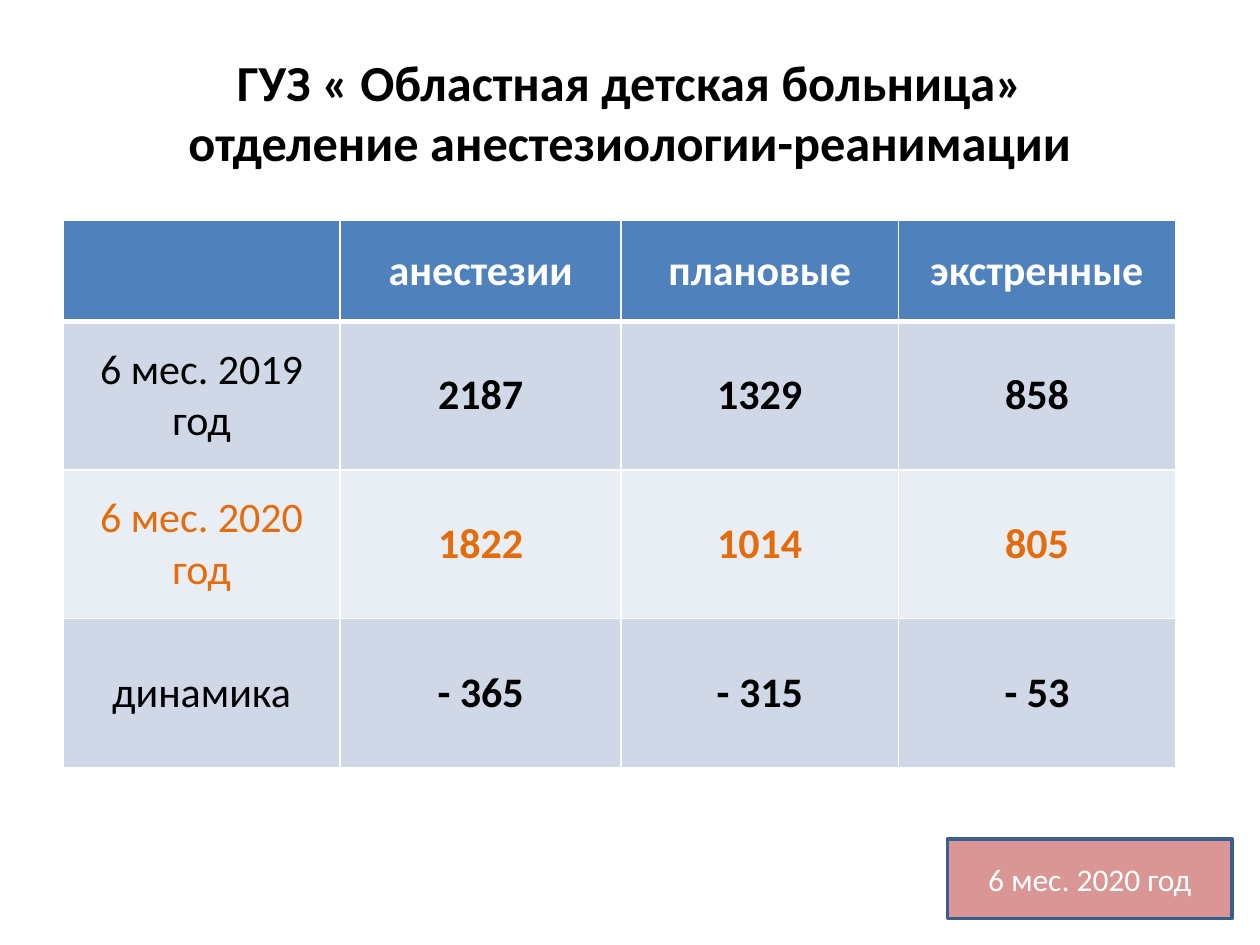
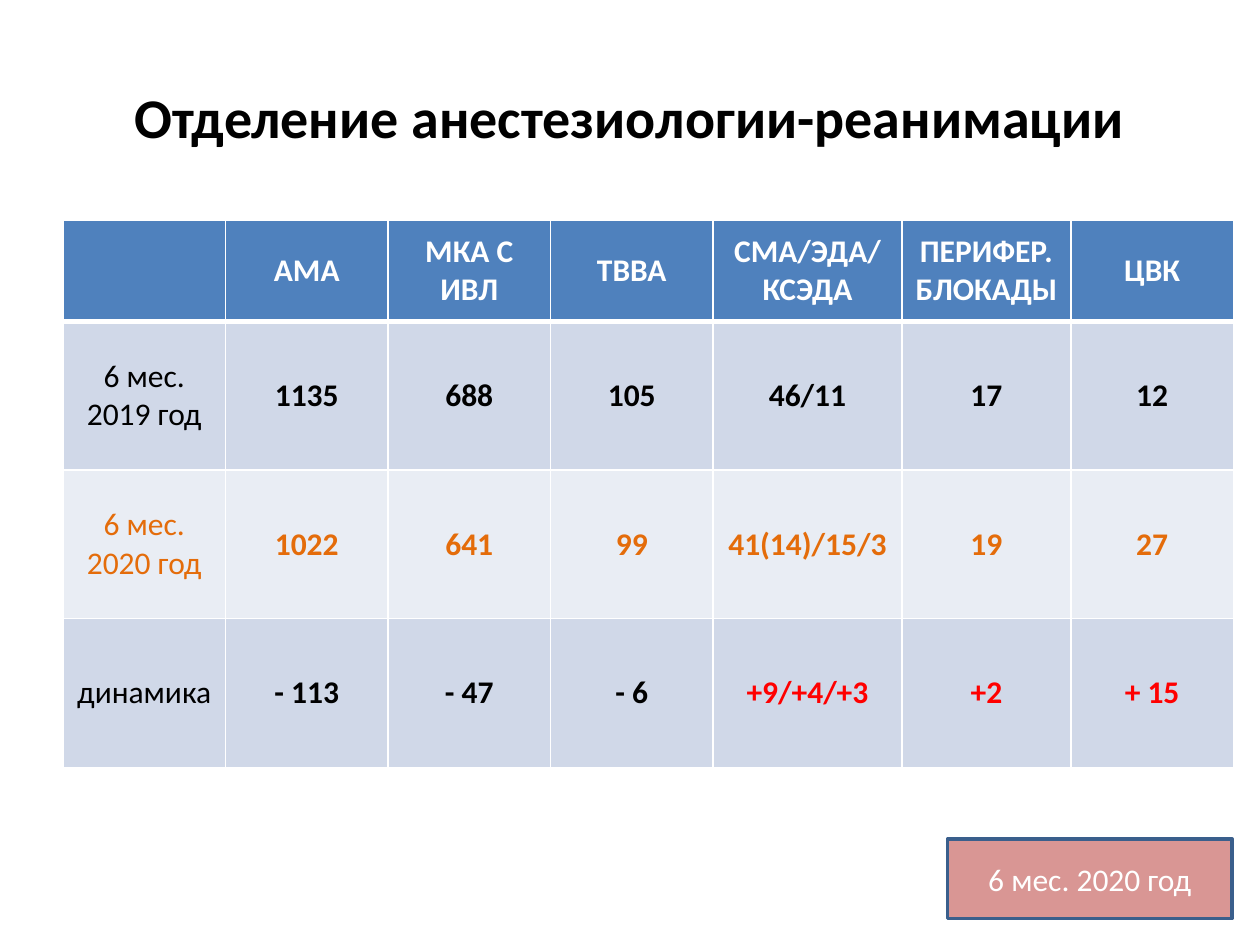
from dataclasses import dataclass

from lxml.etree import SubElement
from pptx import Presentation
from pptx.dml.color import RGBColor
from pptx.enum.shapes import MSO_SHAPE as Shape
from pptx.enum.text import MSO_ANCHOR as Anchor, PP_ALIGN as Align
from pptx.oxml.ns import qn
from pptx.slide import Slide
from pptx.table import _Cell as Cell
from pptx.text.text import TextFrame
from pptx.util import Inches, Pt

FONT = "Calibri"
BLACK = RGBColor(0x00, 0x00, 0x00)
WHITE = RGBColor(0xFF, 0xFF, 0xFF)
RED = RGBColor(0xFF, 0x00, 0x00)
ORANGE = RGBColor(0xE4, 0x6C, 0x0A)
HEADER_BLUE = RGBColor(0x4F, 0x81, 0xBD)
BAND_DARK = RGBColor(0xD0, 0xD8, 0xE8)
BAND_LIGHT = RGBColor(0xE9, 0xED, 0xF4)
BADGE_PINK = RGBColor(0xD9, 0x96, 0x94)
BADGE_LINE = RGBColor(0x3A, 0x5F, 0x8C)

LEFT = 0.5
TABLE_TOP = 1.75
ROW_HEIGHTS = (0.8, 1.18, 1.18, 1.18)
ROW_FILLS = (HEADER_BLUE, BAND_DARK, BAND_LIGHT, BAND_DARK)
ROW_COLORS = (WHITE, BLACK, ORANGE, BLACK)
ROW_LABELS = ("", "6 мес. 2019 год", "6 мес. 2020 год", "динамика")
REPORT_PERIOD = ROW_LABELS[2]


@dataclass(frozen=True)
class TextStyle:
    size: float
    color: RGBColor
    bold: bool = False


@dataclass(frozen=True)
class Report:
    title_lines: tuple[str, ...]
    title_size: float
    title_height: float
    table_size: float
    column_widths: tuple[float, ...]
    values: tuple[tuple[str, ...], ...]
    growth_color: RGBColor = RED


REPORTS = (
    Report(
        ("ГУЗ « Областная детская больница»", "отделение анестезиологии-реанимации"),
        28.8, 1.17, 24, (2.2, 2.23, 2.2, 2.2),
        (
            ("анестезии", "плановые", "экстренные"),
            ("2187", "1329", "858"),
            ("1822", "1014", "805"),
            ("- 365", "- 315", "- 53"),
        ),
    ),
    Report(
        ("Отделение анестезиологии-реанимации",),
        32, 1.25, 18, (1.29, 1.29, 1.29, 1.29, 1.5, 1.34, 1.29),
        (
            ("АМА", "МКА С ИВЛ", "ТВВА", "СМА/ЭДА/КСЭДА", "ПЕРИФЕР.БЛОКАДЫ ", "ЦВК"),
            ("1135", "688", "105", "46/11", "17", "12"),
            ("1022", "641", "99", "41(14)/15/3", "19", "27"),
            ("- 113", "- 47", "- 6", "+9/+4/+3", "+2", "+ 15"),
        ),
    ),
)


def write_centered(frame: TextFrame, lines: tuple[str, ...], style: TextStyle) -> None:
    frame.word_wrap = True
    paragraph = frame.paragraphs[0]
    paragraph.alignment = Align.CENTER
    for index, line in enumerate(lines):
        if index:
            paragraph.add_line_break()
        run = paragraph.add_run()
        run.text = line
        run.font.name = FONT
        run.font.size = Pt(style.size)
        run.font.bold = style.bold
        run.font.color.rgb = style.color


def add_title(slide: Slide, report: Report) -> None:
    box = slide.shapes.add_textbox(
        Inches(LEFT), Inches(0.3), Inches(9), Inches(report.title_height))
    box.text_frame.vertical_anchor = Anchor.MIDDLE
    write_centered(box.text_frame, report.title_lines,
                   TextStyle(report.title_size, BLACK, True))


def add_borders(cell: Cell, top: float, bottom: float) -> None:
    """Give the cell white borders; call before its fill is set."""
    properties = cell._tc.get_or_add_tcPr()
    for tag, width in (("a:lnL", 1), ("a:lnR", 1), ("a:lnT", top), ("a:lnB", bottom)):
        line = SubElement(properties, qn(tag), w=str(Pt(width)))
        fill = SubElement(line, qn("a:solidFill"))
        SubElement(fill, qn("a:srgbClr"), val=str(WHITE))


def add_report_table(slide: Slide, report: Report) -> None:
    widths = report.column_widths
    table = slide.shapes.add_table(
        len(ROW_HEIGHTS), len(widths), Inches(LEFT), Inches(TABLE_TOP),
        Inches(sum(widths)), Inches(sum(ROW_HEIGHTS))).table
    for column, width in zip(table.columns, widths):
        column.width = Inches(width)
    for row_index, (label, values) in enumerate(zip(ROW_LABELS, report.values)):
        table.rows[row_index].height = Inches(ROW_HEIGHTS[row_index])
        for column_index, text in enumerate((label, *values)):
            cell = table.cell(row_index, column_index)
            add_borders(cell, top=3 if row_index == 1 else 1,
                        bottom=3 if row_index == 0 else 1)
            cell.fill.solid()
            cell.fill.fore_color.rgb = ROW_FILLS[row_index]
            cell.vertical_anchor = Anchor.MIDDLE
            if text:
                grown = text.startswith("+")
                color = report.growth_color if grown else ROW_COLORS[row_index]
                write_centered(cell.text_frame, (text,),
                               TextStyle(report.table_size, color, column_index > 0))


def add_period_badge(slide: Slide) -> None:
    badge = slide.shapes.add_shape(
        Shape.RECTANGLE, Inches(7.52), Inches(6.66), Inches(2.26), Inches(0.63))
    badge.shadow.inherit = False
    badge.fill.solid()
    badge.fill.fore_color.rgb = BADGE_PINK
    badge.line.color.rgb = BADGE_LINE
    badge.line.width = Pt(2)
    badge.text_frame.vertical_anchor = Anchor.MIDDLE
    write_centered(badge.text_frame, (REPORT_PERIOD,), TextStyle(18, WHITE))


def main() -> None:
    presentation = Presentation()
    presentation.slide_width = Inches(10)
    presentation.slide_height = Inches(7.5)
    for report in REPORTS:
        slide = presentation.slides.add_slide(presentation.slide_layouts[6])
        add_title(slide, report)
        add_report_table(slide, report)
        add_period_badge(slide)
    presentation.save("out.pptx")


if __name__ == "__main__":
    main()
